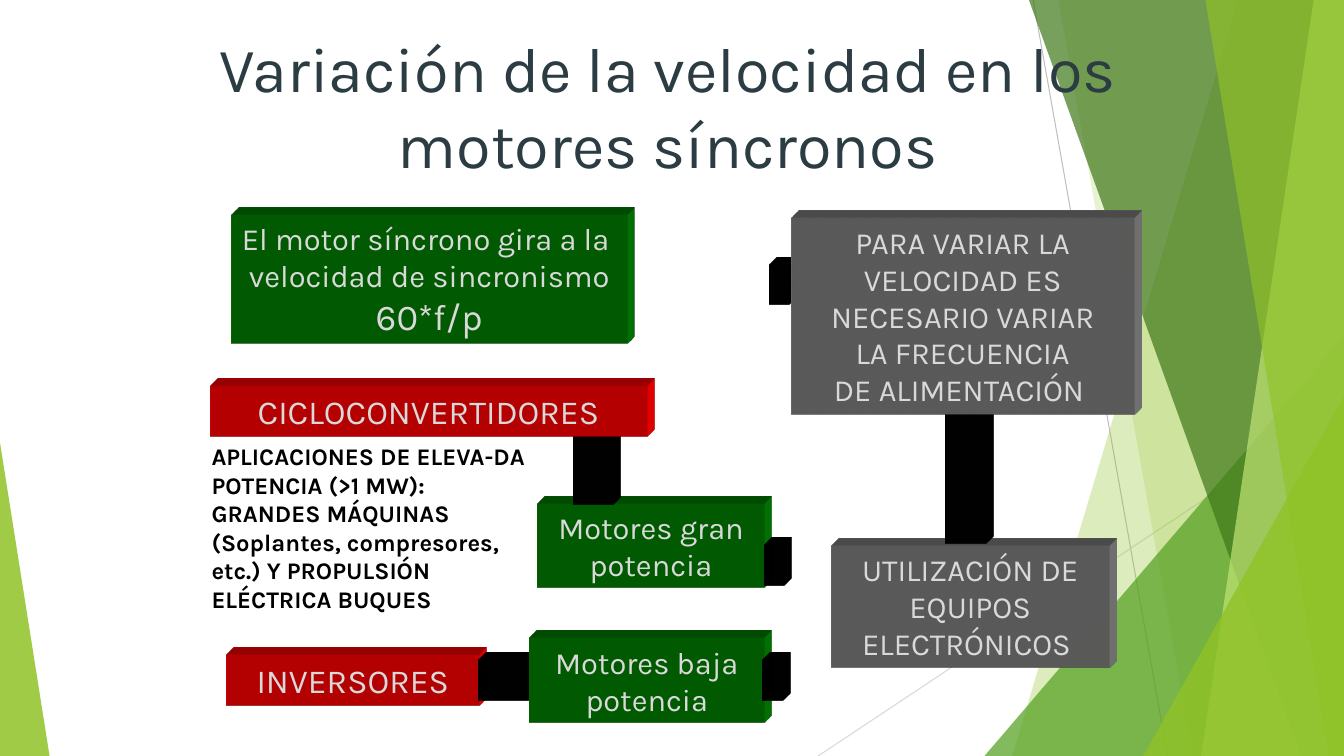
from lxml import etree
from pptx import Presentation
from pptx import util as u
from pptx.dml import color
from pptx.enum import shapes, text
from pptx.oxml import ns

COLUMNS, ROWS = 160, 90
CELL = u.Inches(1 / 12)
GREEN, RED, GRAY, BLACK = "008000", "FF0000", "808080", "000000"
LEAF = "90C226"


def rgb(code):
    return color.RGBColor.from_string(code)


def cells(*counts):
    return [round(count * CELL) for count in counts]


def add_xml(parent, tag, **attributes):
    return etree.SubElement(parent, ns.qn(tag), attributes)


def write(frame, content, size=22, ink="D9D9D9", bold=None, align=text.PP_ALIGN.CENTER,
          anchor=text.MSO_ANCHOR.TOP, fit=text.MSO_AUTO_SIZE.SHAPE_TO_FIT_TEXT,
          wrap=True, last_size=None):
    frame.word_wrap = wrap
    frame.auto_size = fit
    frame.vertical_anchor = anchor
    lines = content.split("\n")
    for index, line in enumerate(lines):
        paragraph = frame.paragraphs[0] if index == 0 else frame.add_paragraph()
        paragraph.alignment = align
        run = paragraph.add_run()
        run.text = line
        is_last = index == len(lines) - 1
        run.font.size = u.Pt(last_size if last_size and is_last else size)
        run.font.name = "Karla"
        run.font.bold = bold
        run.font.color.rgb = rgb(ink)


class Board:
    depth = u.Pt(15)

    def __init__(self, slide):
        self.slide = slide

    def paint(self, shape, fill, opacity=100):
        shape.shadow.inherit = False
        shape.fill.solid()
        shape.fill.fore_color.rgb = rgb(fill)
        shape.line.fill.background()
        if opacity < 100:
            tone = shape._element.spPr.find(".//" + ns.qn("a:srgbClr"))
            add_xml(tone, "a:alpha", val=str(opacity * 1000))

    def ray(self, x1, y1, x2, y2, ink):
        ray = self.slide.shapes.add_connector(shapes.MSO_CONNECTOR.STRAIGHT,
                                              *cells(x1, y1, x2, y2))
        ray.line.color.rgb = rgb(ink)
        ray.line.width = u.Pt(0.75)
        add_xml(ray._element.spPr, "a:effectLst")

    def band(self, top, bottom, fill, opacity):
        outline = self.slide.shapes.build_freeform(*cells(top, 0), scale=1.0)
        corners = [(COLUMNS, 0), (COLUMNS, ROWS), (bottom, ROWS)]
        outline.add_line_segments([cells(*corner) for corner in corners], close=True)
        self.paint(outline.convert_to_shape(), fill, opacity)

    def wedge(self, left, top, width, tip, fill, opacity):
        wedge = self.slide.shapes.add_shape(shapes.MSO_SHAPE.ISOSCELES_TRIANGLE,
                                            *cells(left, top, width, ROWS - top))
        wedge.adjustments[0] = tip
        self.paint(wedge, fill, opacity)

    def block(self, left, top, width, height, fill, content="", turn=0, **style):
        block = self.slide.shapes.add_shape(shapes.MSO_SHAPE.RECTANGLE,
                                            *cells(left, top, width, height))
        block.rotation = turn
        self.paint(block, fill)
        self.extrude(block, fill)
        if content:
            write(block.text_frame, content, **style)

    def extrude(self, block, fill):
        properties = block._element.spPr
        scene = add_xml(properties, "a:scene3d")
        add_xml(scene, "a:camera", prst="legacyObliqueTopRight")
        add_xml(scene, "a:lightRig", rig="legacyFlat3", dir="b")
        solid = add_xml(properties, "a:sp3d", extrusionH=str(int(self.depth)),
                        prstMaterial="legacyMatte")
        for bevel in ("a:bevelT", "a:bevelB"):
            add_xml(solid, bevel, w="13500", h="13500", prst="angle")
        add_xml(add_xml(solid, "a:extrusionClr"), "a:srgbClr", val=fill)

    def label(self, left, top, width, height, content, **style):
        label = self.slide.shapes.add_textbox(*cells(left, top, width, height))
        write(label.text_frame, content, **style)


def draw_backdrop(board):
    board.ray(123, 0, 139, ROWS, "BFBFBF")
    board.ray(COLUMNS, 48.4, 97.4, ROWS, "D9D9D9")
    board.band(147.4, 120.5, LEAF, 30)
    board.band(126, 142, LEAF, 20)
    board.wedge(117.2, 40, 42.8, 1, "54A021", 72)
    board.band(122.5, 154.9, "3F7819", 70)
    board.band(156.4, 143, "C0E474", 70)
    board.band(143.5, 158.2, LEAF, 65)
    board.wedge(136.1, 47.2, 23.9, 1, LEAF, 80)
    board.wedge(0, 52.7, 5.9, 0, LEAF, 85)


def draw_content(board):
    link = 4.8
    board.label(22, 5, 115, 15, "Variación de la velocidad en los motores síncronos",
                size=45, ink="2C3C43", anchor=text.MSO_ANCHOR.MIDDLE,
                fit=text.MSO_AUTO_SIZE.NONE)
    board.block(64, 60, 27, 10, GREEN, "Motores gran potencia")
    board.block(27, 78, 30, 6, RED, "INVERSORES", size=24)
    board.block(91, 64.9, 2.4, link, BLACK)
    board.block(66.5, 53.5, 8.3, link, BLACK, turn=90)
    board.block(25, 46, 52, 6, RED, "CICLOCONVERTIDORES", size=24)
    board.block(57, 78.6, 6.1, link, BLACK)
    board.block(63, 76, 28, 10, GREEN, "Motores baja potencia")
    board.block(90.8, 78.6, 2.4, link, BLACK)
    board.block(99, 65, 33, 14.5, GRAY, "UTILIZACIÓN DE\nEQUIPOS ELECTRÓNICOS ")
    board.block(107.2, 54.6, 15.5, link, BLACK, turn=90)
    board.block(27.5, 25.6, 47.2, 15.3, GREEN,
                "El motor síncrono gira a la \nvelocidad de sincronismo\n60*f/p",
                wrap=False, last_size=26)
    board.block(91.6, 31.5, 2.4, link, BLACK)
    board.block(94.2, 26, 40.8, 23.4, GRAY,
                "PARA VARIAR LA\nVELOCIDAD ES\nNECESARIO VARIAR\nLA FRECUENCIA\nDE ALIMENTACIÓN ")
    board.label(24, 52, 40, 21.8,
                "APLICACIONES DE ELEVA-DA POTENCIA (>1 MW): GRANDES MÁQUINAS "
                "(Soplantes, compresores, etc.) Y PROPULSIÓN ELÉCTRICA BUQUES",
                size=17, ink=BLACK, bold=True, align=text.PP_ALIGN.LEFT)


def main():
    deck = Presentation()
    deck.slide_width, deck.slide_height = cells(COLUMNS, ROWS)
    board = Board(deck.slides.add_slide(deck.slide_layouts[6]))
    draw_backdrop(board)
    draw_content(board)
    deck.save("out.pptx")


if __name__ == "__main__":
    main()
